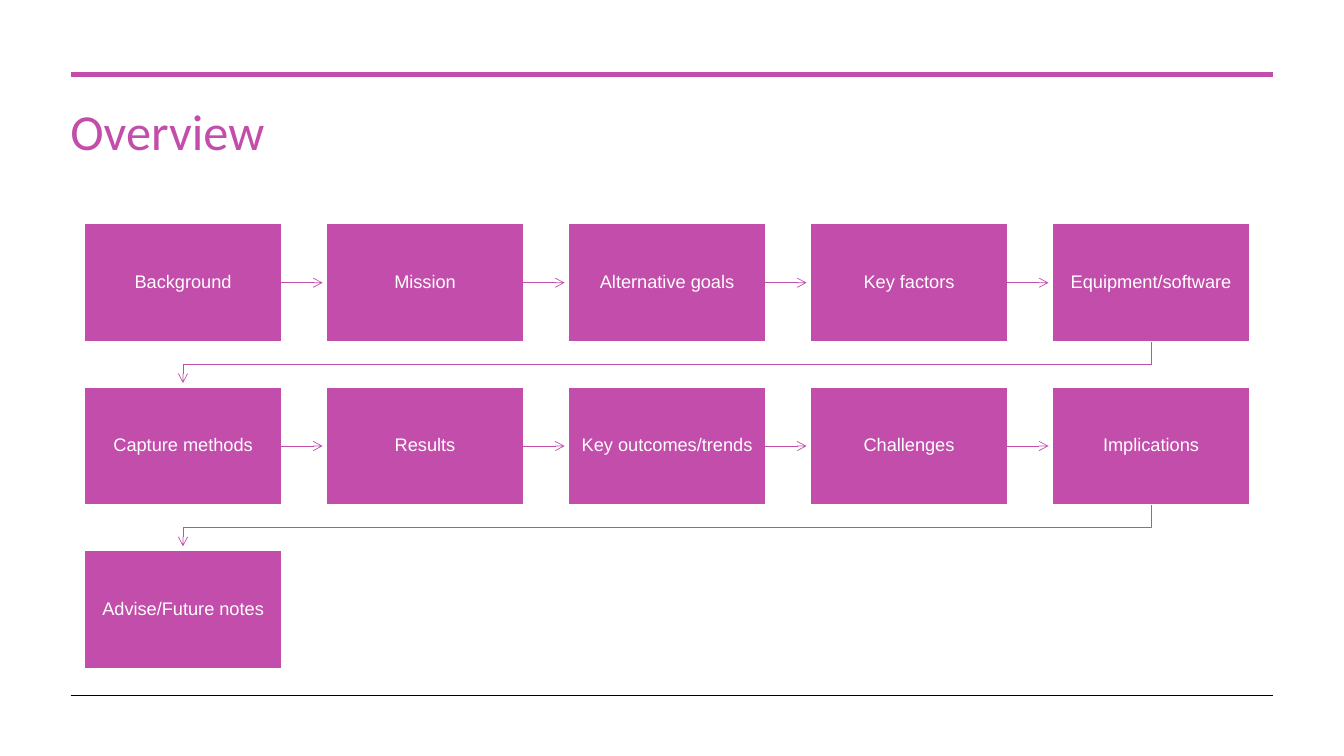
from dataclasses import dataclass

from lxml import etree
from pptx import Presentation
from pptx.dml.color import RGBColor
from pptx.enum.shapes import MSO_CONNECTOR, MSO_SHAPE
from pptx.enum.text import MSO_ANCHOR, PP_ALIGN
from pptx.oxml.ns import qn
from pptx.shapes.autoshape import Shape
from pptx.shapes.connector import Connector
from pptx.slide import Slide
from pptx.text.text import TextFrame
from pptx.util import Inches, Pt

MAGENTA = RGBColor(0xC3, 0x4D, 0xAA)
WHITE = RGBColor(0xFF, 0xFF, 0xFF)
BLACK = RGBColor(0x00, 0x00, 0x00)
STRAIGHT = MSO_CONNECTOR.STRAIGHT
RECTANGLE = MSO_SHAPE.RECTANGLE
LEFT, CENTER = PP_ALIGN.LEFT, PP_ALIGN.CENTER
TOP, MIDDLE = MSO_ANCHOR.TOP, MSO_ANCHOR.MIDDLE
RIGHT_SIDE = 3

COLUMNS = 5
GRID_LEFT, GRID_TOP = 0.84, 2.22
COLUMN_PITCH, ROW_PITCH = 2.4, 1.62
STEP_WIDTH, STEP_HEIGHT = 1.95, 1.17
ARROW_LENGTH = 0.41
TURN_DROP = 0.22

STEP_NAMES = [
    "Background", "Mission", "Alternative goals", "Key factors", "Equipment/software",
    "Capture methods", "Results", "Key outcomes/trends", "Challenges", "Implications",
    "Advise/Future notes",
]


@dataclass
class Step:
    name: str
    column: int
    row: int

    @property
    def left(self) -> float:
        return GRID_LEFT + self.column * COLUMN_PITCH

    @property
    def top(self) -> float:
        return GRID_TOP + self.row * ROW_PITCH

    @property
    def center_x(self) -> float:
        return self.left + STEP_WIDTH / 2

    @property
    def center_y(self) -> float:
        return self.top + STEP_HEIGHT / 2

    @property
    def right(self) -> float:
        return self.left + STEP_WIDTH

    @property
    def bottom(self) -> float:
        return self.top + STEP_HEIGHT


def write_text(frame: TextFrame, text: str, *, font: str, size: float, color: RGBColor,
               align: PP_ALIGN, anchor: MSO_ANCHOR, spacing: float) -> None:
    frame.word_wrap = True
    frame.vertical_anchor = anchor
    paragraph = frame.paragraphs[0]
    paragraph.alignment = align
    paragraph.line_spacing = spacing
    run = paragraph.add_run()
    run.text = text
    run.font.name = font
    run.font.size = Pt(size)
    run.font.color.rgb = color


def style_line(shape: Shape | Connector, color: RGBColor, width: float) -> None:
    shape.line.color.rgb = color
    shape.line.width = Pt(width)


def add_arrowhead(shape: Shape | Connector) -> None:
    outline = shape.line._get_or_add_ln()
    etree.SubElement(outline, qn("a:tailEnd"), type="arrow")


def add_line(slide: Slide, x1: float, y1: float, x2: float, y2: float,
             color: RGBColor, width: float) -> Connector:
    line = slide.shapes.add_connector(STRAIGHT, Inches(x1), Inches(y1), Inches(x2), Inches(y2))
    style_line(line, color, width)
    etree.SubElement(line._element.spPr, qn("a:effectLst"))
    return line


def add_step(slide: Slide, step: Step) -> Shape:
    box = slide.shapes.add_shape(RECTANGLE, Inches(step.left), Inches(step.top),
                                 Inches(STEP_WIDTH), Inches(STEP_HEIGHT))
    box.shadow.inherit = False
    box.fill.solid()
    box.fill.fore_color.rgb = MAGENTA
    style_line(box, WHITE, 1)
    frame = box.text_frame
    frame.margin_left = frame.margin_right = Inches(0.1)
    frame.margin_top = frame.margin_bottom = Inches(0.1)
    write_text(frame, step.name, font="Arial", size=13, color=WHITE,
               align=CENTER, anchor=MIDDLE, spacing=0.9)
    return box


def add_forward_arrow(slide: Slide, step: Step, box: Shape) -> None:
    arrow = add_line(slide, step.right, step.center_y,
                     step.right + ARROW_LENGTH, step.center_y, MAGENTA, 0.5)
    arrow.begin_connect(box, RIGHT_SIDE)
    add_arrowhead(arrow)


def add_row_turn(slide: Slide, last: Step, first: Step) -> None:
    """Lead from the last step of a row to the first step of the next."""
    turn_y = last.bottom + TURN_DROP
    builder = slide.shapes.build_freeform(Inches(last.center_x), Inches(last.bottom))
    corners = [(last.center_x, turn_y), (first.center_x, turn_y),
               (first.center_x, last.bottom + ARROW_LENGTH)]
    builder.add_line_segments([(Inches(x), Inches(y)) for x, y in corners], close=False)
    turn = builder.convert_to_shape()
    turn.shadow.inherit = False
    turn.fill.background()
    style_line(turn, MAGENTA, 0.5)
    add_arrowhead(turn)


def main() -> None:
    presentation = Presentation()
    presentation.slide_width = Inches(13.33)
    presentation.slide_height = Inches(7.5)
    slide = presentation.slides.add_slide(presentation.slide_layouts[6])

    add_line(slide, 0.7, 0.74, 12.63, 0.74, MAGENTA, 3)
    add_line(slide, 0.7, 6.9, 12.63, 6.9, BLACK, 0.5)
    title = slide.shapes.add_textbox(Inches(0.6), Inches(1.04), Inches(12.02), Inches(1.18))
    write_text(title.text_frame, "Overview", font="Calibri", size=36, color=MAGENTA,
               align=LEFT, anchor=TOP, spacing=0.85)

    steps = [Step(name, i % COLUMNS, i // COLUMNS) for i, name in enumerate(STEP_NAMES)]
    boxes = [add_step(slide, step) for step in steps]
    for step, following, box in zip(steps, steps[1:], boxes):
        if step.row == following.row:
            add_forward_arrow(slide, step, box)
        else:
            add_row_turn(slide, step, following)

    presentation.save("out.pptx")


if __name__ == "__main__":
    main()
